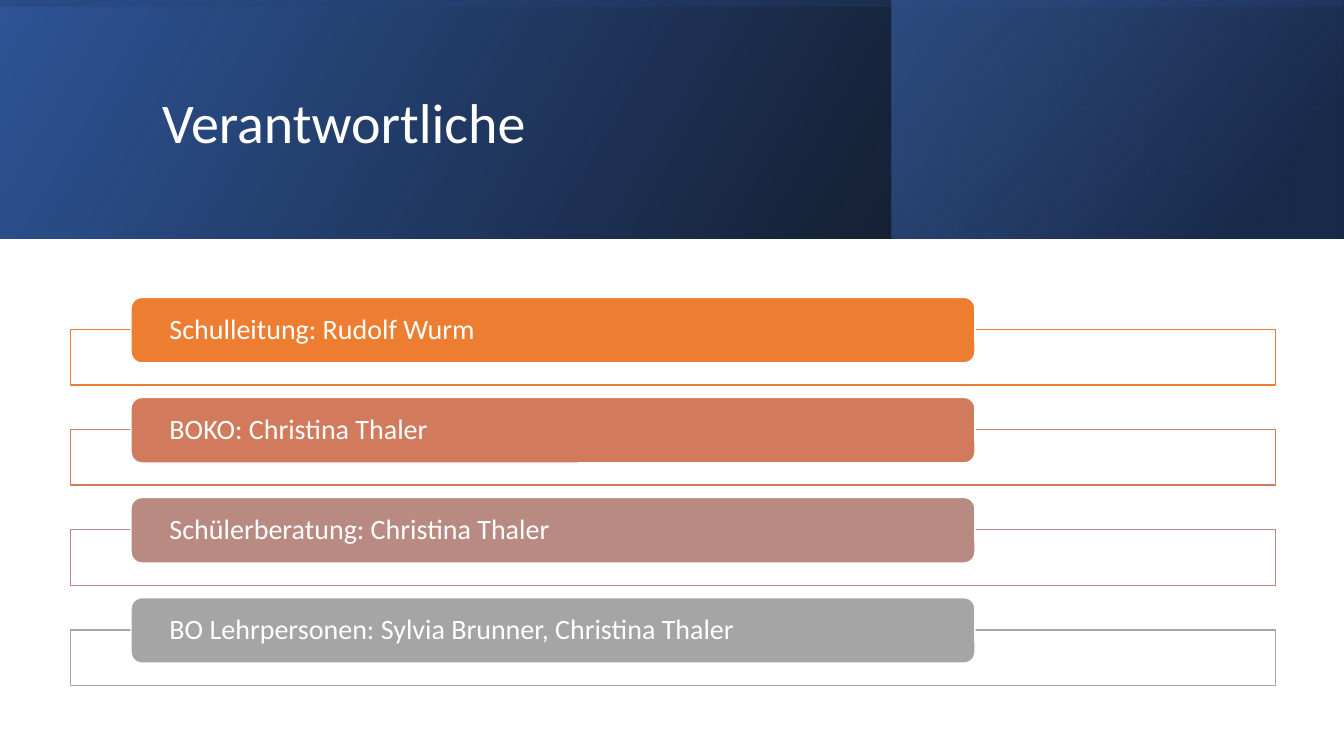
from pptx import Presentation
from pptx.dml.color import RGBColor
from pptx.enum.shapes import MSO_SHAPE as SHAPE
from pptx.enum.text import MSO_ANCHOR as ANCHOR, PP_ALIGN as ALIGN
from pptx.oxml.ns import qn
from pptx.util import Inches, Pt
from lxml import etree

WHITE = RGBColor(0xFF, 0xFF, 0xFF)
BLACK = RGBColor(0x00, 0x00, 0x00)
BLUE = RGBColor(0x2F, 0x55, 0x97)
NAVY = RGBColor(0x20, 0x38, 0x64)
LIGHT_BLUE = RGBColor(0x44, 0x72, 0xC4)
ORANGE = RGBColor(0xED, 0x7D, 0x31)
TERRACOTTA = RGBColor(0xD1, 0x7B, 0x5C)
ROSE = RGBColor(0xB9, 0x8A, 0x82)
GREY = RGBColor(0xA5, 0xA5, 0xA5)


def set_fill_alphas(s, alphas):
    """Give the fill colours of s, in order, their opacity in percent."""
    for color, alpha in zip(s._element.spPr.iter(qn("a:srgbClr")), alphas):
        etree.SubElement(color, qn("a:alpha")).set("val", str(alpha * 1000))


def add_text(s, text, size, inset):
    tf = s.text_frame
    tf.word_wrap = True
    tf.vertical_anchor = ANCHOR.MIDDLE
    tf.margin_left = tf.margin_right = Inches(inset)
    p = tf.paragraphs[0]
    p.alignment = ALIGN.LEFT
    p.line_spacing = 0.9
    r = p.add_run()
    r.text = text
    r.font.name = "Calibri"
    r.font.size = Pt(size)
    r.font.color.rgb = WHITE


prs = Presentation()
prs.slide_width = Inches(13.33)
prs.slide_height = Inches(7.5)
slide = prs.slides.add_slide(prs.slide_layouts[6])
shapes = slide.shapes

# Header: three mirrored gradients, stops as (position, colour, opacity)
header_layers = [
    ((0, 0, 13.33, 2.37), 0, 30,
     [(0, BLACK, 96), (1, BLUE, 100)]),
    ((8.84, 0, 4.48, 2.37), 0, 40,
     [(0.19, NAVY, 68), (1, LIGHT_BLUE, 48)]),
    ((5.48, -5.48, 2.37, 13.33), 270, 10,
     [(0.23, BLUE, 16), (0.99, BLACK, 45)]),
]
for box, rotation, angle, stops in header_layers:
    s = shapes.add_shape(SHAPE.RECTANGLE, *map(Inches, box))
    s.shadow.inherit = False
    s.line.fill.background()
    s.rotation = rotation
    s._element.spPr.xfrm.set("flipH", "1")
    s.fill.gradient()
    s.fill.gradient_angle = angle
    for stop, (position, color, _) in zip(s.fill.gradient_stops, stops):
        stop.position = position
        stop.color.rgb = color
    set_fill_alphas(s, [alpha for _, _, alpha in stops])

title = shapes.add_textbox(Inches(1.51), Inches(0.38), Inches(10.63), Inches(1.72))
add_text(title, "Verantwortliche", 40, 0.1)

# One frame with a coloured bar for each role
roles = [
    ("Schulleitung: Rudolf Wurm", ORANGE),
    ("BOKO: Christina Thaler", TERRACOTTA),
    ("Schülerberatung: Christina Thaler", ROSE),
    ("BO Lehrpersonen: Sylvia Brunner, Christina Thaler", GREY),
]
for i, (role, color) in enumerate(roles):
    top = 2.95 + i * 0.993
    frame = shapes.add_shape(SHAPE.RECTANGLE, Inches(0.7), Inches(top + 0.32),
                             Inches(11.95), Inches(0.55))
    bar = shapes.add_shape(SHAPE.ROUNDED_RECTANGLE, Inches(1.3), Inches(top),
                           Inches(8.37), Inches(0.65))
    for s, fill, line in ((frame, WHITE, color), (bar, color, WHITE)):
        s.shadow.inherit = False
        s.fill.solid()
        s.fill.fore_color.rgb = fill
        s.line.color.rgb = line
        s.line.width = Pt(1)
    set_fill_alphas(frame, [90])
    add_text(bar, role, 20, 0.35)

prs.save("out.pptx")
